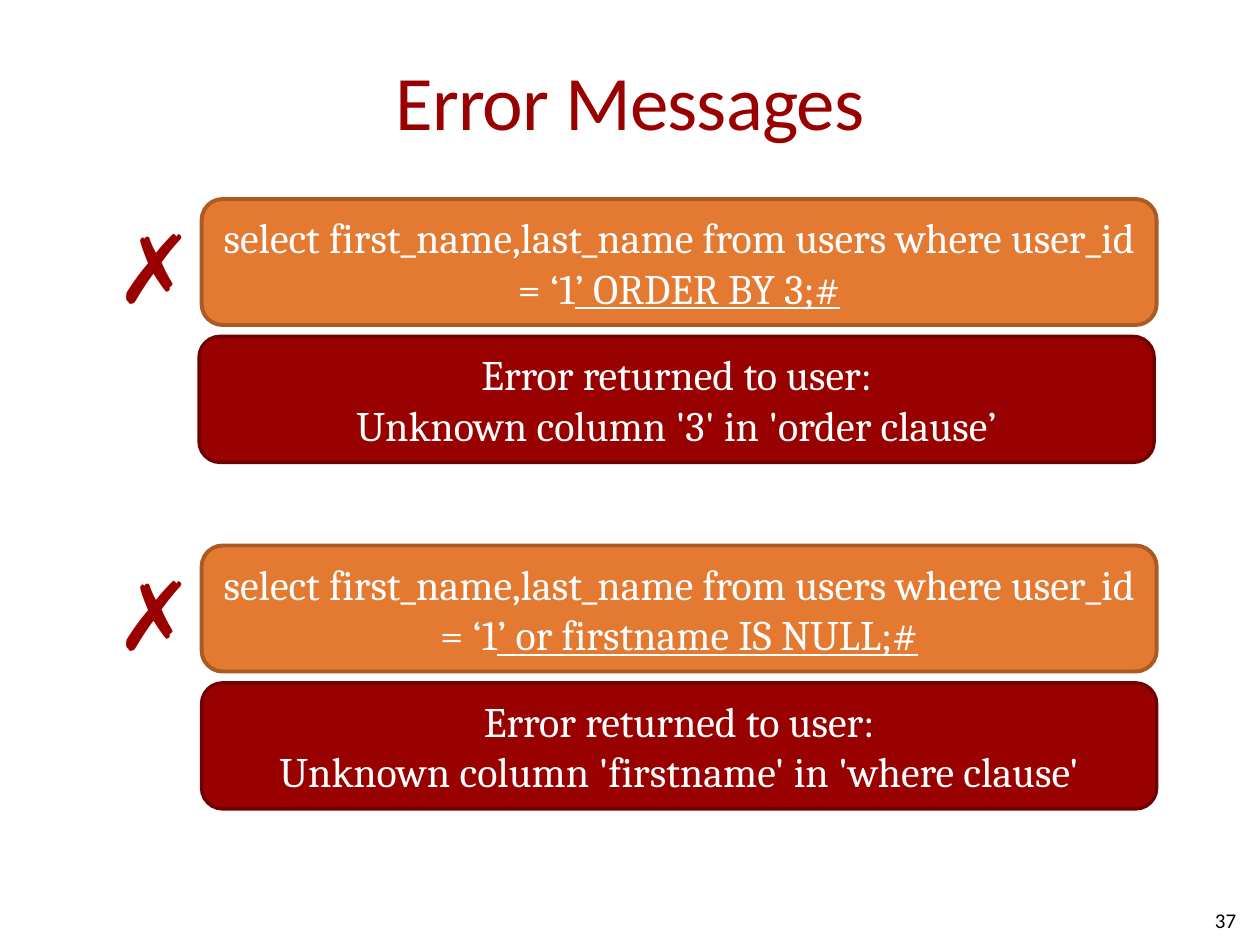
import pptx
import pptx.util
from pptx.dml.color import RGBColor
from pptx.enum.shapes import MSO_SHAPE
from pptx.enum.text import MSO_ANCHOR, MSO_AUTO_SIZE, PP_ALIGN

Inches, Pt = pptx.util.Inches, pptx.util.Pt

RED = RGBColor(0x99, 0x00, 0x00)
DARK_RED = RGBColor(0x71, 0x00, 0x00)
ORANGE = RGBColor(0xE4, 0x79, 0x32)
DARK_ORANGE = RGBColor(0xA9, 0x5A, 0x25)
WHITE = RGBColor(0xFF, 0xFF, 0xFF)
BLACK = RGBColor(0x00, 0x00, 0x00)

SLIDE_W, SLIDE_H = Inches(10), Inches(7.5)
ROW_H = Inches(1)          # height of one box
ROW_STEP = Inches(1.09)    # from a query to its error
BOX_W = Inches(7.58)
LEFT = Inches(1.6)
QUERY = "select first_name,last_name from users where user_id = ‘1"

# top of the example, left of its error box, injected text, error text
EXAMPLES = [
    (1.58, 1.58, "’ ORDER BY 3;#", "Unknown column '3' in 'order clause’"),
    (4.33, 1.6, "’ or firstname IS NULL;#",
     "Unknown column 'firstname' in 'where clause'"),
]


def style(p, name, size, color, align=None):
    p.font.name = name
    p.font.size = Pt(size)
    p.font.color.rgb = color
    p.alignment = align


def add_title(s, text, left, top, width, height):
    sp = s.shapes.title
    sp.left, sp.top, sp.width, sp.height = left, top, width, height
    tf = sp.text_frame
    tf.margin_left = tf.margin_right = 0
    tf.vertical_anchor = MSO_ANCHOR.MIDDLE
    p = tf.paragraphs[0]
    r = p.add_run()
    r.text = text
    style(p, "Calibri", 44, RED, PP_ALIGN.CENTER)
    r._r.get_or_add_rPr().set("spc", "-50")


def add_box(shapes, left, top, fill, line, line_width):
    """Add a rounded box and return its paragraph, ready for text."""
    sp = shapes.add_shape(MSO_SHAPE.ROUNDED_RECTANGLE, left, top, BOX_W, ROW_H)
    sp.shadow.inherit = False
    sp.fill.solid()
    sp.fill.fore_color.rgb = fill
    sp.line.color.rgb = line
    sp.line.width = Pt(line_width)
    tf = sp.text_frame
    tf.word_wrap = True
    tf.vertical_anchor = MSO_ANCHOR.MIDDLE
    p = tf.paragraphs[0]
    style(p, "Cambria", 24, WHITE, PP_ALIGN.CENTER)
    return p


def add_query(s, left, top, injected):
    """Query box with the injected part underlined, and a cross beside it."""
    shapes = s.shapes.add_group_shape().shapes
    p = add_box(shapes, left, top, ORANGE, DARK_ORANGE, 2.25)
    p.add_run().text = QUERY
    r = p.add_run()
    r.text = injected
    r.font.underline = True

    cross = shapes.add_textbox(left - Inches(0.78), top + Inches(0.03),
                               Inches(0.64), Inches(1.01))
    tf = cross.text_frame
    tf.word_wrap = False
    tf.auto_size = MSO_AUTO_SIZE.SHAPE_TO_FIT_TEXT
    p = tf.paragraphs[0]
    p.text = "✗"
    style(p, "Arial", 54, RED)


def add_error(s, left, top, message):
    p = add_box(s.shapes, left, top, RED, DARK_RED, 2)
    p.text = "Error returned to user:\v" + message


def add_number(s, text, left, top, width, height):
    tf = s.shapes.add_textbox(left, top, width, height).text_frame
    tf.word_wrap = True
    tf.vertical_anchor = MSO_ANCHOR.MIDDLE
    p = tf.paragraphs[0]
    p.text = text
    style(p, "Calibri", 12, BLACK, PP_ALIGN.RIGHT)


def main():
    prs = pptx.Presentation()
    prs.slide_width, prs.slide_height = SLIDE_W, SLIDE_H
    s = prs.slides.add_slide(prs.slide_layouts[5])

    add_title(s, "Error Messages", Inches(0.5), Inches(0.17),
              Inches(9), Inches(1.25))
    add_number(s, "37", Inches(7.58), Inches(7.1), Inches(2.33), Inches(0.4))

    # Each example: a query above the error it returns
    for top, error_left, injected, message in EXAMPLES:
        add_query(s, LEFT, Inches(top), injected)
        add_error(s, Inches(error_left), Inches(top) + ROW_STEP, message)

    prs.save("out.pptx")


if __name__ == "__main__":
    main()
